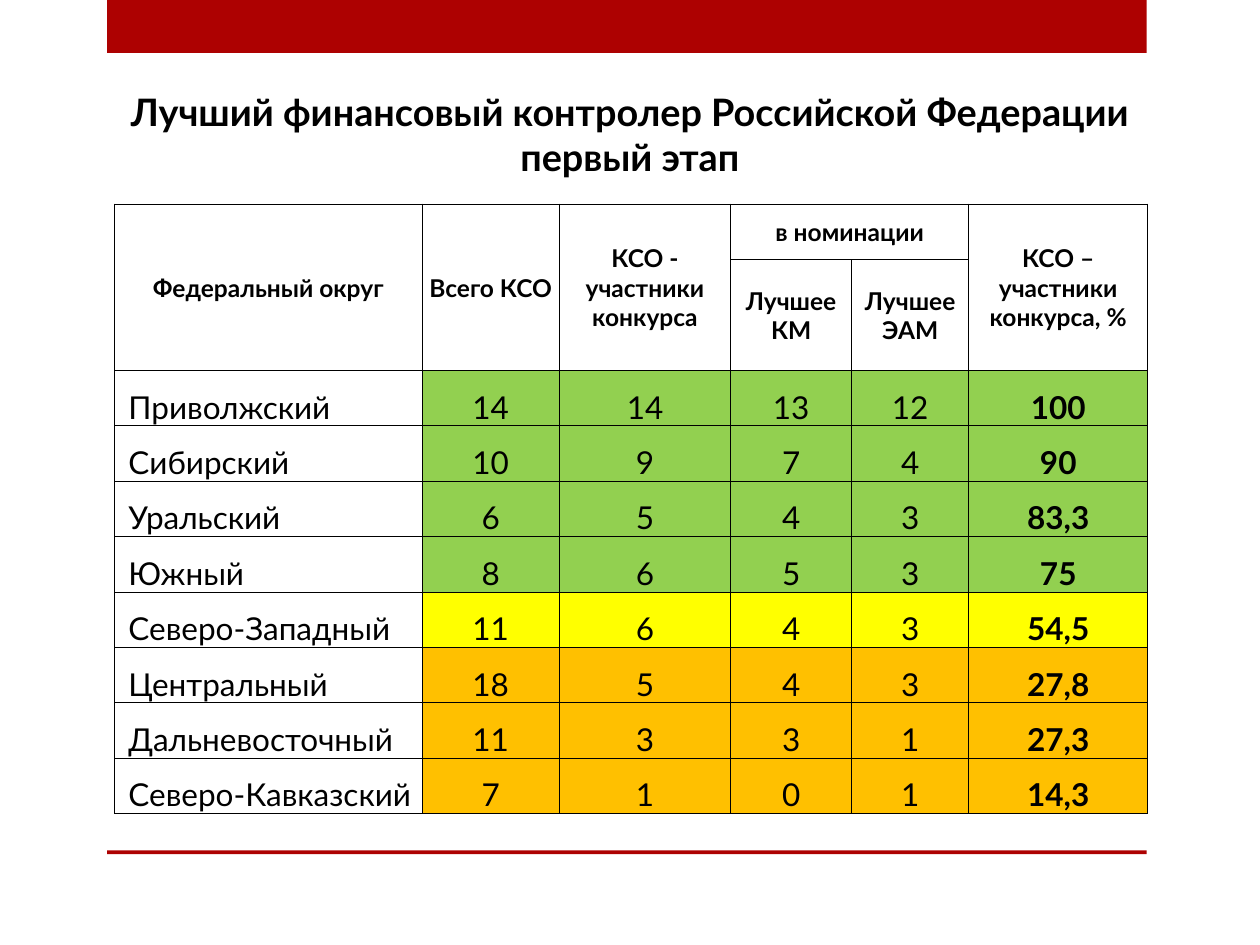
from dataclasses import dataclass
from typing import Optional

from pptx import Presentation
from pptx.dml.color import RGBColor
from pptx.enum.shapes import MSO_SHAPE as Shape
from pptx.enum.text import MSO_ANCHOR as Anchor, PP_ALIGN as Align
from pptx.oxml import parse_xml
from pptx.oxml.ns import nsdecls
from pptx.util import Inches, Pt

FONT, BLACK, RED = "Lato", "000000", "AD0101"
GREEN, YELLOW, ORANGE = "92D050", "FFFF00", "FFC000"
WIDTH, HEIGHT = 10, 7.5
COLUMNS = (2.44, 1.09, 1.36, 0.96, 0.93, 1.42)
ROW = 0.44
HEADER_ROWS = 2


@dataclass
class Header:
    text: str
    row: int
    col: int
    rows: int = 1
    cols: int = 1


@dataclass
class District:
    name: str
    counts: tuple[int, int, int, int]
    percent: str
    color: str


HEADERS = (
    Header("Федеральный округ", 0, 0, rows=2),
    Header("Всего КСО", 0, 1, rows=2),
    Header("КСО -\nучастники конкурса", 0, 2, rows=2),
    Header("в номинации", 0, 3, cols=2),
    Header("КСО –\nучастники конкурса, %", 0, 5, rows=2),
    Header("Лучшее КМ", 1, 3),
    Header("Лучшее ЭАМ", 1, 4),
)
DISTRICTS = (
    District("Приволжский", (14, 14, 13, 12), "100", GREEN),
    District("Сибирский", (10, 9, 7, 4), "90", GREEN),
    District("Уральский", (6, 5, 4, 3), "83,3", GREEN),
    District("Южный", (8, 6, 5, 3), "75", GREEN),
    District("Северо-Западный", (11, 6, 4, 3), "54,5", YELLOW),
    District("Центральный", (18, 5, 4, 3), "27,8", ORANGE),
    District("Дальневосточный", (11, 3, 3, 1), "27,3", ORANGE),
    District("Северо-Кавказский", (7, 1, 0, 1), "14,3", ORANGE),
)


def rgb(color: str) -> RGBColor:
    """Turn a hex string into a colour."""
    return RGBColor.from_string(color)


def style(p, size: float, bold: bool, align) -> None:
    """Set the font and alignment of a paragraph."""
    p.alignment = align
    p.font.name, p.font.size, p.font.bold = FONT, Pt(size), bold
    p.font.color.rgb = rgb(BLACK)


def add_bar(s, top: float, height: float) -> None:
    """Draw a red bar as wide as the content."""
    sp = s.shapes.add_shape(Shape.RECTANGLE, Inches(0.085 * WIDTH), Inches(top),
                            Inches(0.825 * WIDTH), Inches(height))
    sp.shadow.inherit = False
    sp.fill.solid()
    sp.fill.fore_color.rgb = rgb(RED)
    sp.line.fill.background()


def add_title(s, text: str) -> None:
    """Write the centred slide title."""
    sp = s.shapes.add_textbox(Inches(0.05 * WIDTH), Inches(0.08 * HEIGHT),
                              Inches(0.9 * WIDTH), Inches(0.87))
    tf = sp.text_frame
    tf.word_wrap, tf.vertical_anchor = True, Anchor.BOTTOM
    p = tf.paragraphs[0]
    p.text = text
    style(p, 21.6, True, Align.CENTER)


def format_cell(cell, color: Optional[str]) -> None:
    """Give a cell its margins, thin borders and fill."""
    cell.margin_left = cell.margin_right = cell.margin_top = Inches(0.01)
    cell.margin_bottom = 0
    tc_pr = cell._tc.get_or_add_tcPr()
    for side in "LRTB":
        tc_pr.append(parse_xml(
            f'<a:ln{side} {nsdecls("a")} w="{Pt(0.5)}"><a:solidFill>'
            f'<a:srgbClr val="{BLACK}"/></a:solidFill></a:ln{side}>'))
    if color:
        cell.fill.solid()
        cell.fill.fore_color.rgb = rgb(color)
    else:
        cell.fill.background()


def write_cell(cell, text: str, size: float, bold: bool, anchor, align=Align.CENTER) -> None:
    """Write text in a cell, one paragraph a line."""
    cell.text_frame.text = text
    cell.vertical_anchor = anchor
    for p in cell.text_frame.paragraphs:
        style(p, size, bold, align)


def add_district(table, row: int, district: District) -> None:
    """Fill one table row with a district's results."""
    values = (district.name, *map(str, district.counts), district.percent)
    last = len(values) - 1
    for col, value in enumerate(values):
        cell = table.cell(row, col)
        format_cell(cell, district.color if col else None)
        write_cell(cell, value, 18, col == last, Anchor.BOTTOM,
                   Align.CENTER if col else Align.LEFT)
    name = table.cell(row, 0).text_frame.paragraphs[0]
    name._p.get_or_add_pPr().set("marL", str(Inches(0.1)))


def add_results(s) -> None:
    """Draw the results table with its two-level header."""
    count = HEADER_ROWS + len(DISTRICTS)
    table = s.shapes.add_table(count, len(COLUMNS), Inches(0.91), Inches(1.62),
                               Inches(sum(COLUMNS)), Inches(ROW * (count + 1))).table
    table.first_row = table.horz_banding = False
    for column, width in zip(table.columns, COLUMNS):
        column.width = Inches(width)
    for i, row in enumerate(table.rows):
        row.height = Inches(ROW * (2 if i == 1 else 1))
    for row in range(HEADER_ROWS):
        for col in range(len(COLUMNS)):
            format_cell(table.cell(row, col), None)
    for h in HEADERS:
        cell = table.cell(h.row, h.col)
        if h.rows * h.cols > 1:
            cell.merge(table.cell(h.row + h.rows - 1, h.col + h.cols - 1))
        write_cell(cell, h.text, 14, True, Anchor.MIDDLE)
    for row, district in enumerate(DISTRICTS, HEADER_ROWS):
        add_district(table, row, district)


def main() -> None:
    """Build and save the slide."""
    prs = Presentation()
    prs.slide_width, prs.slide_height = Inches(WIDTH), Inches(HEIGHT)
    s = prs.slides.add_slide(prs.slide_layouts[6])
    add_bar(s, 0, 0.42)
    add_bar(s, 0.9 * HEIGHT, 0.03)
    add_title(s, "Лучший финансовый контролер Российской Федерации\vпервый этап")
    add_results(s)
    prs.save("out.pptx")


if __name__ == "__main__":
    main()
